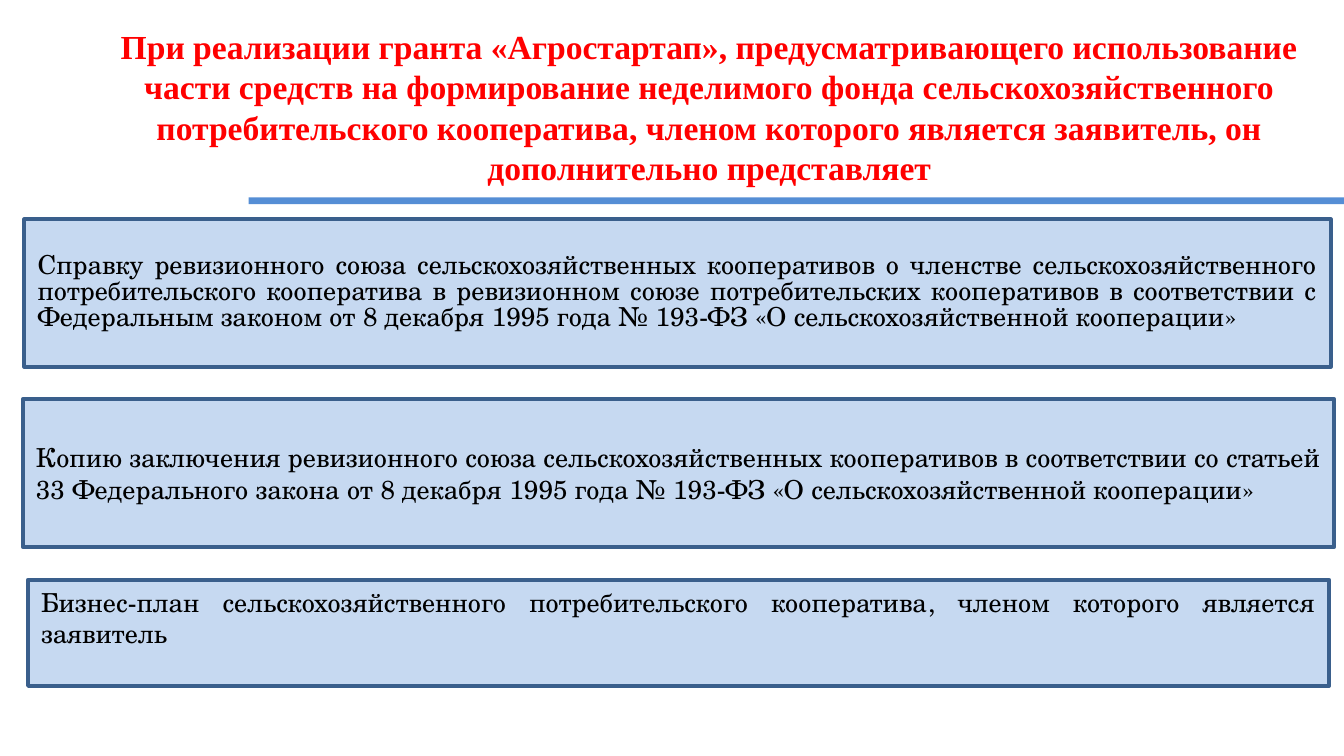
from pptx import Presentation
from pptx.dml.color import RGBColor
from pptx.enum.shapes import MSO_SHAPE
from pptx.enum.text import MSO_ANCHOR, MSO_AUTO_SIZE, PP_ALIGN
from pptx.util import Cm, Pt

RECTANGLE = MSO_SHAPE.RECTANGLE
TOP, MIDDLE = MSO_ANCHOR.TOP, MSO_ANCHOR.MIDDLE
CENTER, JUSTIFY = PP_ALIGN.CENTER, PP_ALIGN.JUSTIFY
NO_AUTOFIT = MSO_AUTO_SIZE.NONE
TITLE_ONLY = 5

COLORS = {
    "title": "FF0000",
    "text": "000000",
    "box": "C6D9F1",
    "border": "3A5F8C",
    "rule": "558ED5",
}

TITLE = (
    "При реализации гранта «Агростартап», предусматривающего использование "
    "части средств на формирование неделимого фонда сельскохозяйственного "
    "потребительского кооператива, членом которого является заявитель, "
    "он дополнительно представляет"
)

# left, top, width, height in cm; anchor; line spacing; text
DOCUMENTS = [
    ((0.46, 4.14, 24.69, 2.79), MIDDLE, Pt(14),
     "Справку ревизионного союза сельскохозяйственных кооперативов "
     "о членстве сельскохозяйственного потребительского кооператива "
     "в ревизионном союзе потребительских кооперативов в соответствии "
     "с Федеральным законом от 8 декабря 1995 года № 193-ФЗ "
     "«О сельскохозяйственной кооперации»"),
    ((0.43, 7.54, 24.79, 2.79), MIDDLE, None,
     "Копию заключения ревизионного союза сельскохозяйственных кооперативов "
     "в соответствии со статьей 33 Федерального закона от 8 декабря "
     "1995 года № 193-ФЗ «О сельскохозяйственной кооперации»"),
    ((0.53, 10.95, 24.59, 2.01), TOP, None,
     "Бизнес-план сельскохозяйственного потребительского кооператива, "
     "членом которого является заявитель"),
]


def color(name):
    return RGBColor.from_string(COLORS[name])


def write_text(shape, text, font_name, size, color_name, align, anchor,
               spacing=None, bold=False):
    frame = shape.text_frame
    frame.text = text
    frame.word_wrap = True
    frame.auto_size = NO_AUTOFIT
    frame.vertical_anchor = anchor
    para = frame.paragraphs[0]
    para.alignment = align
    para.line_spacing = spacing
    para.font.name = font_name
    para.font.size = Pt(size)
    para.font.bold = bold
    para.font.color.rgb = color(color_name)


def add_title(page):
    title = page.shapes.title
    title.left, title.top = Cm(1.9), Cm(0.36)
    title.width, title.height = Cm(23.01), Cm(2.01)
    write_text(title, TITLE, "Times New Roman", 18, "title", CENTER, TOP,
               spacing=Pt(21.6), bold=True)


def add_rectangle(page, place, fill_name):
    box = page.shapes.add_shape(RECTANGLE, *map(Cm, place))
    box.shadow.inherit = False
    box.fill.solid()
    box.fill.fore_color.rgb = color(fill_name)
    box.line.fill.background()
    return box


def add_document_box(page, place, anchor, spacing, text):
    box = add_rectangle(page, place, "box")
    box.line.color.rgb = color("border")
    box.line.width = Pt(2)
    write_text(box, text, "TeX Gyre Schola", 14, "text", JUSTIFY, anchor,
               spacing)


def main():
    deck = Presentation()
    deck.slide_width, deck.slide_height = Cm(25.4), Cm(14.28)
    page = deck.slides.add_slide(deck.slide_layouts[TITLE_ONLY])
    add_title(page)
    for document in DOCUMENTS:
        add_document_box(page, *document)
    add_rectangle(page, (4.7, 3.73, 20.7, 0.13), "rule")
    deck.save("out.pptx")


if __name__ == "__main__":
    main()
